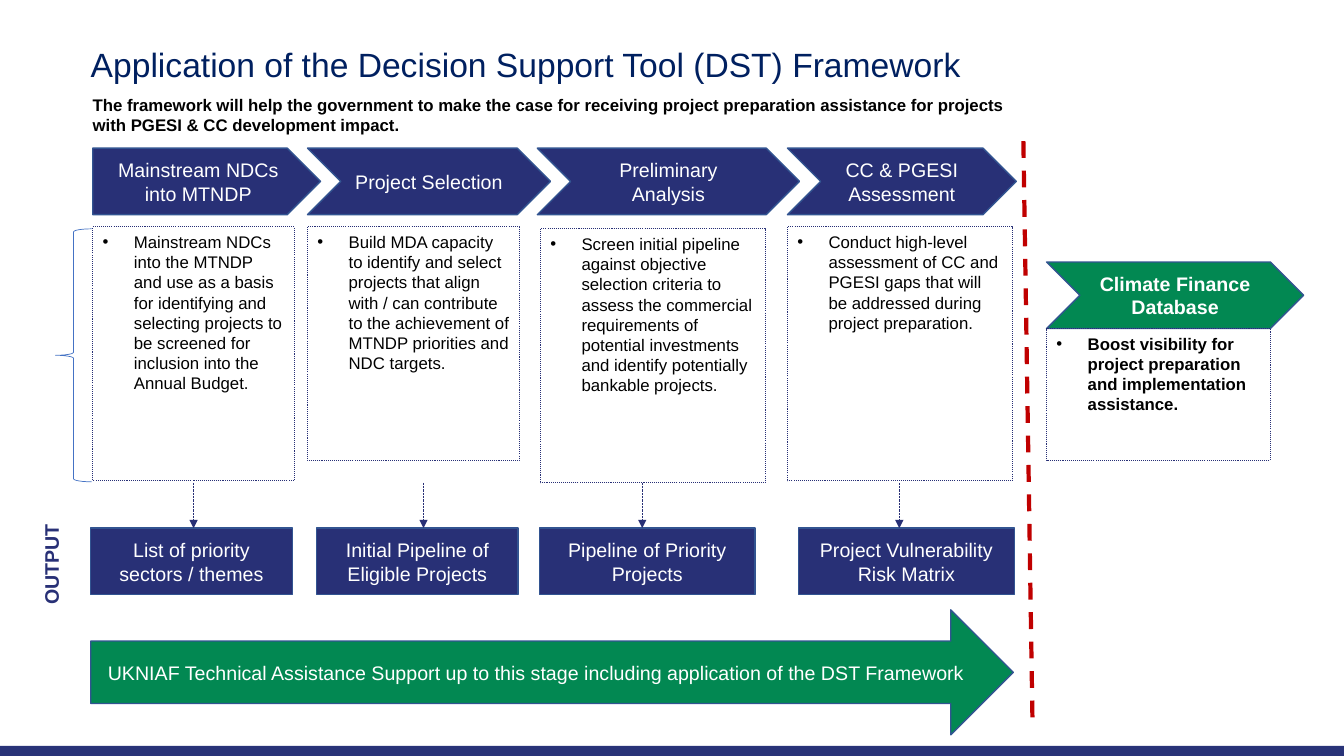
from dataclasses import dataclass

from lxml import etree
from pptx import Presentation
from pptx.dml.color import RGBColor
from pptx.enum.dml import MSO_LINE
from pptx.enum.shapes import MSO_CONNECTOR, MSO_SHAPE
from pptx.enum.text import MSO_ANCHOR, MSO_AUTO_SIZE, PP_ALIGN
from pptx.oxml.ns import qn
from pptx.util import Pt

PX = 9144  # 100 px to the inch
NAVY = RGBColor(0x28, 0x30, 0x76)
FOOTER_NAVY = RGBColor(0x29, 0x33, 0x78)
TITLE_NAVY = RGBColor(0x00, 0x20, 0x60)
EDGE_BLUE = RGBColor(0x32, 0x54, 0x91)
BRACE_BLUE = RGBColor(0x44, 0x72, 0xC4)
GREEN = RGBColor(0x02, 0x88, 0x52)
RED = RGBColor(0xC0, 0x00, 0x00)
BLACK = RGBColor(0, 0, 0)
WHITE = RGBColor(0xFF, 0xFF, 0xFF)

RECT, PLATE, CHEVRON = MSO_SHAPE.RECTANGLE, MSO_SHAPE.PENTAGON, MSO_SHAPE.CHEVRON
BRACE, RIGHT_ARROW = MSO_SHAPE.LEFT_BRACE, MSO_SHAPE.RIGHT_ARROW
STRAIGHT = MSO_CONNECTOR.STRAIGHT
DOTTED, DASHED = MSO_LINE.ROUND_DOT, MSO_LINE.DASH
LEFT, CENTER = PP_ALIGN.LEFT, PP_ALIGN.CENTER
TOP, MIDDLE, BOTTOM = MSO_ANCHOR.TOP, MSO_ANCHOR.MIDDLE, MSO_ANCHOR.BOTTOM
NO_FIT = MSO_AUTO_SIZE.NONE

HEADING_FONT = {"size": Pt(14), "bold": False}
BODY_FONT = {"size": Pt(12), "bold": False}


@dataclass
class Stage:
    left: int
    head_shape: int
    head_width: int
    head: list
    card_shift: int
    card_top: int
    card_width: int
    card_height: int
    task: str
    output_shift: int
    output_width: int
    output: str
    arrow_shift: int


STAGES = [
    Stage(92, PLATE, 226, ["Mainstream NDCs", "into MTNDP"], 0, 78, 200, 252,
          "Mainstream NDCs into the MTNDP and use as a basis for identifying and "
          "selecting projects to be screened for inclusion into the Annual Budget.",
          -2, 200, "List of priority sectors / themes", 100),
    Stage(305, CHEVRON, 241, ["Project Selection"], 0, 78, 210, 232,
          "Build MDA capacity to identify and select projects that align with / can "
          "contribute to the achievement of MTNDP priorities and NDC targets.",
          9, 200, "Initial Pipeline of Eligible Projects", 115),
    Stage(533, CHEVRON, 260, ["Preliminary Analysis"], 3, 80, 223, 252,
          "Screen initial pipeline against objective selection criteria to assess the "
          "commercial requirements of potential investments and identify potentially "
          "bankable projects.",
          2, 214, "Pipeline of Priority Projects", 104),
    Stage(781, CHEVRON, 227, ["CC & PGESI Assessment"], 0, 78, 223, 252,
          "Conduct high-level assessment of CC and PGESI gaps that will be addressed "
          "during project preparation.",
          11, 214, "Project Vulnerability Risk Matrix", 111),
]


def px(*lengths):
    return [length * PX for length in lengths]


def write(shape, lines, style, color, align=CENTER, anchor=MIDDLE):
    frame = shape.text_frame
    for key, value in {"word_wrap": True, "auto_size": NO_FIT,
                       "vertical_anchor": anchor}.items():
        setattr(frame, key, value)
    for index, line in enumerate(lines):
        paragraph = frame.add_paragraph() if index else frame.paragraphs[0]
        paragraph.text = line
        paragraph.alignment = align
        font = paragraph.runs[0].font
        for key, value in {"name": "Arial", **style}.items():
            setattr(font, key, value)
        font.color.rgb = color


def add_bullet(paragraph):
    properties = paragraph._p.get_or_add_pPr()
    properties.set("marL", str(31 * PX))
    properties.set("indent", str(-31 * PX))
    etree.SubElement(properties, qn("a:buFont")).set("typeface", "Arial")
    etree.SubElement(properties, qn("a:buChar")).set("char", "•")


def add_block(slide, kind, box, fill=None, edge=EDGE_BLUE, weight=1):
    block = slide.shapes.add_shape(kind, *px(*box))
    block.shadow.inherit = False
    if fill is None:
        block.fill.background()
    else:
        block.fill.solid()
        block.fill.fore_color.rgb = fill
    if edge is None:
        block.line.fill.background()
    else:
        block.line.color.rgb = edge
        block.line.width = Pt(weight)
    return block


def add_line(slide, ends, color, weight, dash, arrow=False):
    connector = slide.shapes.add_connector(STRAIGHT, *px(*ends))
    line = connector.line
    line.color.rgb = color
    line.width = Pt(weight)
    line.dash_style = dash
    if arrow:
        etree.SubElement(line._get_or_add_ln(), qn("a:tailEnd")).set("type", "triangle")
    etree.SubElement(connector._element.spPr, qn("a:effectLst"))


def add_card(slide, box, task, bold=False):
    card = add_block(slide, RECT, box, edge=NAVY, weight=0.75)
    card.line.dash_style = DOTTED
    add_bullet(card.text_frame.paragraphs[0])
    write(card, [task], {**BODY_FONT, "bold": bold}, BLACK, LEFT, TOP)


def add_heading(slide, box):
    left, top, width, height = box
    title = slide.shapes.title
    title.left, title.top, title.width, title.height = px(left, top, width, height)
    write(title, ["Application of the Decision Support Tool (DST) Framework"],
          {"size": Pt(24), "bold": False}, TITLE_NAVY, LEFT, BOTTOM)
    summary = slide.shapes.add_textbox(*px(left + 2, top + height, 933, 50))
    write(summary, ["The framework will help the government to make the case for receiving "
                    "project preparation assistance for projects with PGESI & CC "
                    "development impact."], {**BODY_FONT, "bold": True}, BLACK, LEFT, TOP)


def add_stage(slide, top, stage):
    head = add_block(slide, stage.head_shape, (stage.left, top, stage.head_width, 66), NAVY)
    write(head, stage.head, HEADING_FONT, WHITE)
    add_card(slide, (stage.left + stage.card_shift, top + stage.card_top,
                     stage.card_width, stage.card_height), stage.task)
    output = add_block(slide, RECT, (stage.left + stage.output_shift, top + 377,
                                     stage.output_width, 66), NAVY)
    write(output, [stage.output], HEADING_FONT, WHITE)
    arrow_x = stage.left + stage.arrow_shift
    add_line(slide, (arrow_x, top + 332, arrow_x, top + 377), NAVY, 0.5, DOTTED, True)


def add_database(slide, left, top):
    head = add_block(slide, CHEVRON, (left, top, 255, 66), GREEN)
    write(head, ["Climate Finance Database"], {**HEADING_FONT, "bold": True}, WHITE)
    add_card(slide, (left, top + 66, 222, 131),
             "Boost visibility for project preparation and implementation assistance.", True)


def add_margin(slide, left, top):
    add_block(slide, BRACE, (left, top, 36, 251), edge=BRACE_BLUE, weight=0.5)
    label = slide.shapes.add_textbox(*px(left - 86, top + 316, 164, 34))
    label.rotation = 270
    write(label, ["OUTPUT"], {**HEADING_FONT, "bold": True}, NAVY, anchor=TOP)


def add_support(slide, box):
    support = add_block(slide, RIGHT_ARROW, box, GREEN)
    write(support, ["UKNIAF Technical Assistance Support up to this stage including "
                    "application of the DST Framework"], HEADING_FONT, WHITE)


def main():
    deck = Presentation()
    deck.slide_width, deck.slide_height = px(1333, 750)
    slide = deck.slides.add_slide(deck.slide_layouts[5])

    # Footer band and heading
    add_block(slide, RECT, (0, 740, 1333, 10), FOOTER_NAVY, edge=None)
    add_heading(slide, (80, 10, 1015, 79))

    # Four stages, each with its task and output
    for stage in STAGES:
        add_stage(slide, 147, stage)
    add_margin(slide, 55, 227)

    # Support up to the boundary, database beyond it
    add_support(slide, (90, 605, 915, 124))
    add_line(slide, (1015, 140, 1024, 712), RED, 3, DASHED)
    add_database(slide, 1038, 260)

    deck.save("out.pptx")


if __name__ == "__main__":
    main()
